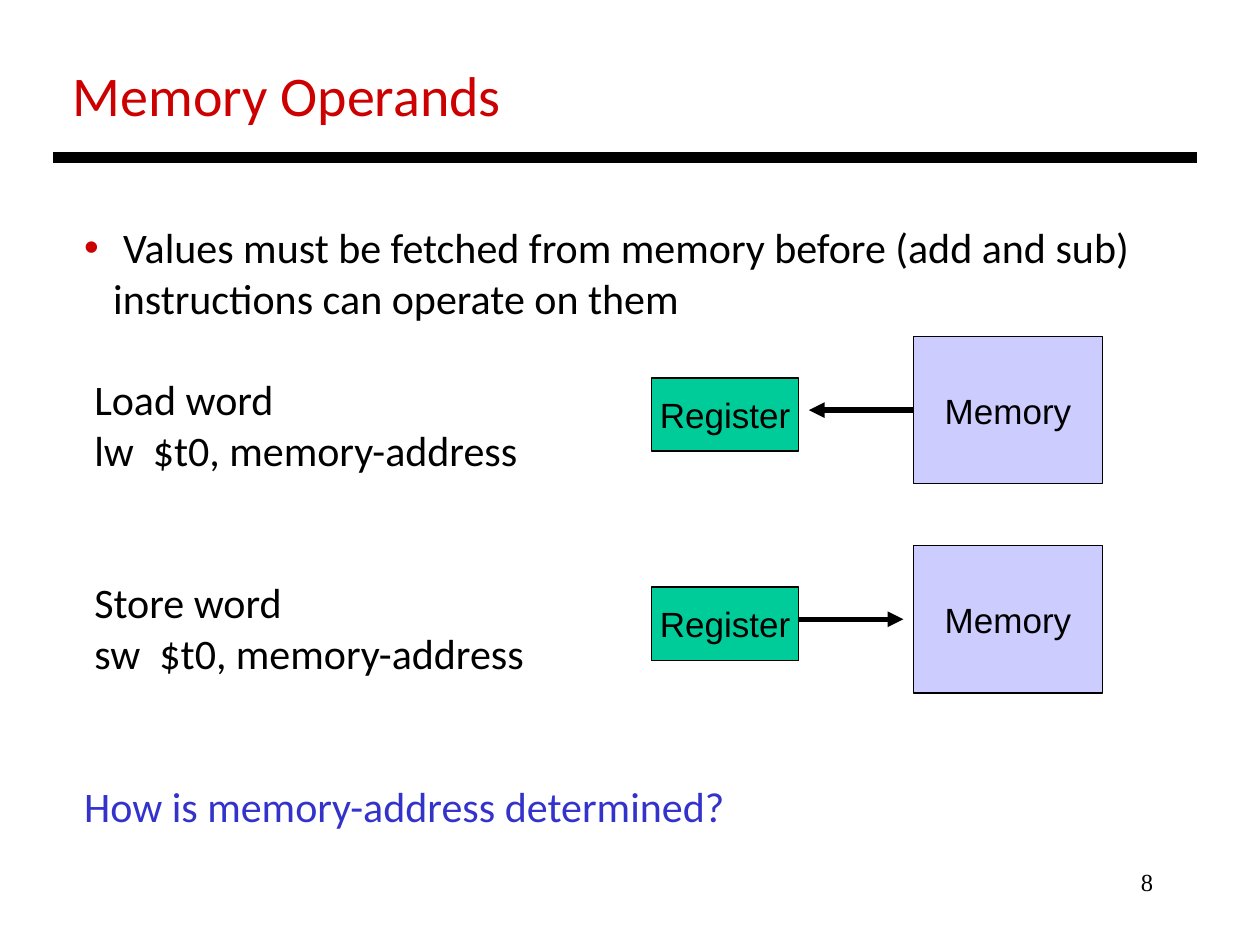
from lxml import etree
from pptx import Presentation, util as u
from pptx.dml.color import RGBColor
from pptx.enum import shapes, text
from pptx.oxml.ns import qn

INK = {"black": "000000", "red": "CC0000", "blue": "3333CC",
       "green": "00CC99", "lilac": "CCCCFF"}
LEFT, MID, RIGHT = text.PP_ALIGN.LEFT, text.PP_ALIGN.CENTER, text.PP_ALIGN.RIGHT


def color(name):
    return RGBColor.from_string(INK[name])


class Deck:
    """Holds the style and the current slide."""
    body = "Calibri"
    label = "Arial"

    def __init__(self, wide, high):
        self.prs = Presentation()
        self.prs.slide_width = u.Inches(wide)
        self.prs.slide_height = u.Inches(high)
        self.slide = self.prs.slides.add_slide(self.prs.slide_layouts[6])

    def para(self, para, words, size, face, ink="black", align=LEFT):
        para.alignment = align
        run = para.add_run()
        run.text = words
        for key, val in {"size": u.Pt(size), "name": face}.items():
            setattr(run.font, key, val)
        run.font.color.rgb = color(ink)

    def frame(self, *box):
        frame = self.slide.shapes.add_textbox(*map(u.Inches, box)).text_frame
        frame.word_wrap = True
        return frame

    def note(self, box, *style):
        self.para(self.frame(*box).paragraphs[0], *style)

    def indent(self, para, left, bullet=None):
        props = para._p.get_or_add_pPr()
        props.set("marL", str(u.Inches(left)))
        props.set("indent", str(-u.Inches(left) if bullet else 0))
        if bullet:
            tint = etree.SubElement(props, qn("a:buClr"))
            etree.SubElement(tint, qn("a:srgbClr"), val=INK[bullet])
            etree.SubElement(props, qn("a:buFont"), typeface="Arial")
            etree.SubElement(props, qn("a:buChar"), char="•")

    def block(self, box, lines, size):
        frame = self.frame(*box)
        for i, (words, left, skip, ink, bullet) in enumerate(lines):
            para = frame.paragraphs[0] if i == 0 else frame.add_paragraph()
            self.para(para, words, size, self.body, ink)
            para.space_before = u.Pt(skip * size * 1.22)
            self.indent(para, left, bullet)

    def rect(self, box, words, fill):
        rect = self.slide.shapes.add_shape(
            shapes.MSO_SHAPE.RECTANGLE, *map(u.Inches, box))
        rect.shadow.inherit = False
        rect.fill.solid()
        rect.fill.fore_color.rgb = color(fill)
        rect.line.color.rgb = color("black")
        rect.line.width = u.Pt(0.75)
        form = {"word_wrap": False, "vertical_anchor": text.MSO_ANCHOR.MIDDLE}
        for key, val in form.items():
            setattr(rect.text_frame, key, val)
        self.para(rect.text_frame.paragraphs[0], words, 20, self.label, align=MID)
        return rect

    def line(self, start, end, width, head=False):
        line = self.slide.shapes.add_connector(
            shapes.MSO_CONNECTOR.STRAIGHT, *map(u.Inches, start + end))
        line.line.color.rgb = color("black")
        line.line.width = u.Pt(width)
        if head:
            etree.SubElement(line.line._get_or_add_ln(), qn("a:tailEnd"),
                             type="triangle")
        etree.SubElement(line._element.spPr, qn("a:effectLst"))
        return line


def main():
    deck = Deck(10, 7.5)

    # Page number, title and rule
    deck.note((7.17, 6.83, 2.08, 0.5), "8", 14, "Times New Roman", "black", RIGHT)
    deck.note((0.48, 0.43, 3.7, 0.64), "Memory Operands", 32, deck.body, "red")
    deck.line((0.42, 1.25), (9.5, 1.25), 6)

    # Body: words, indent, lines skipped above, ink, bullet ink
    deck.block((0.57, 1.71, 8.6, 4.95), [
        ("Values must be fetched from memory before (add and sub)",
         0.31, 0, "black", "red"),
        ("instructions can operate on them", 0.23, 0, "black", None),
        ("Load word", 0.08, 1, "black", None),
        ("lw  $t0, memory-address", 0.08, 0, "black", None),
        ("Store word", 0.08, 2, "black", None),
        ("sw  $t0, memory-address", 0.08, 0, "black", None),
        ("How is memory-address determined?", 0, 2, "blue", None),
    ], 24)

    # Load and store diagrams
    high = 1.17
    for top, load in ((2.67, True), (4.33, False)):
        deck.rect((5.17, top + 0.33, 1.17, 0.58), "Register", "green")
        memory = deck.rect((7.25, top, 1.5, high), "Memory", "lilac")
        mid = top + high / 2
        if load:
            arrow = deck.line((7.25, mid), (6.42, mid), 3, head=True)
            arrow.begin_connect(memory, 1)
        else:
            deck.line((6.33, mid), (7.17, mid), 3, head=True)

    deck.prs.save("out.pptx")


if __name__ == "__main__":
    main()
